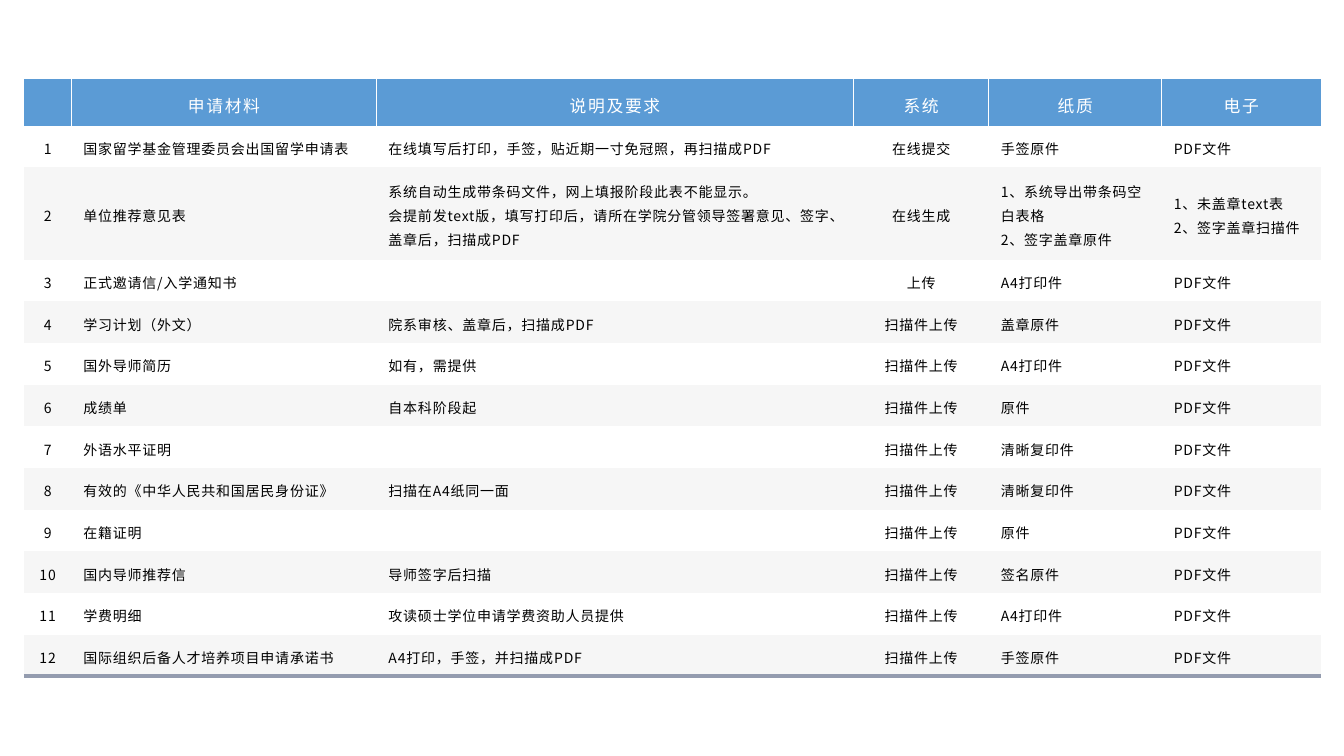
import dataclasses

import lxml.etree
import pptx
import pptx.dml.color
import pptx.enum.text
import pptx.oxml.ns
import pptx.util

Cm = pptx.util.Cm
Pt = pptx.util.Pt
qn = pptx.oxml.ns.qn


@dataclasses.dataclass(frozen=True)
class Theme:
    """Colours, type sizes and spacing of the slide."""
    font: str = "Noto Sans CJK SC"
    header_fill: str = "5B9BD5"
    header_text: str = "FFFFFF"
    body_text: str = "000000"
    odd_fill: str = "FFFFFF"
    even_fill: str = "F6F6F6"
    divider: str = "FFFFFF"
    closing_rule: str = "949CAF"
    header_size: float = 12
    body_size: float = 10
    header_tracking: int = 120
    body_tracking: int = 60
    line_spacing: float = 1.2
    no_grid_style: str = "{2D5ABB26-0587-4C30-8999-92F81FD0307C}"


THEME = Theme()

HEADINGS = ["", "申请材料", "说明及要求", "系统", "纸质", "电子"]
COLUMN_WIDTHS = [1.2, 7.69, 12.02, 3.41, 4.36, 4.0]
CENTRED_COLUMNS = {0, 3}
HEADER_HEIGHT = 1.18
ROW_HEIGHT = 1.05
TALL_ROW_HEIGHT = 2.32
UPLOAD = "扫描件上传"
PDF = "PDF文件"
MATERIALS = [
    ("国家留学基金管理委员会出国留学申请表",
     "在线填写后打印，手签，贴近期一寸免冠照，再扫描成PDF", "在线提交", "手签原件", PDF),
    ("单位推荐意见表",
     "系统自动生成带条码文件，网上填报阶段此表不能显示。\n"
     "会提前发text版，填写打印后，请所在学院分管领导签署意见、签字、盖章后，扫描成PDF",
     "在线生成", "1、系统导出带条码空白表格\n2、签字盖章原件",
     "1、未盖章text表\n2、签字盖章扫描件"),
    ("正式邀请信/入学通知书", "", "上传", "A4打印件", PDF),
    ("学习计划（外文）", "院系审核、盖章后，扫描成PDF", UPLOAD, "盖章原件", PDF),
    ("国外导师简历", "如有，需提供", UPLOAD, "A4打印件", PDF),
    ("成绩单", "自本科阶段起", UPLOAD, "原件", PDF),
    ("外语水平证明", "", UPLOAD, "清晰复印件", PDF),
    ("有效的《中华人民共和国居民身份证》", "扫描在A4纸同一面", UPLOAD, "清晰复印件", PDF),
    ("在籍证明", "", UPLOAD, "原件", PDF),
    ("国内导师推荐信", "导师签字后扫描", UPLOAD, "签名原件", PDF),
    ("学费明细", "攻读硕士学位申请学费资助人员提供", UPLOAD, "A4打印件", PDF),
    ("国际组织后备人才培养项目申请承诺书", "A4打印，手签，并扫描成PDF", UPLOAD, "手签原件", PDF),
]


def add_border(cell, side, colour, points):
    """Draw one solid border; side is L, R, T or B."""
    properties = cell._tc.get_or_add_tcPr()
    line = lxml.etree.SubElement(properties, qn(f"a:ln{side}"), w=str(Pt(points)))
    fill = lxml.etree.SubElement(line, qn("a:solidFill"))
    lxml.etree.SubElement(fill, qn("a:srgbClr"), val=colour)


def style_run(run, size, colour, tracking):
    """Set the font, size, colour and letter spacing of a run."""
    run.font.name = THEME.font
    run.font.size = Pt(size)
    run.font.color.rgb = pptx.dml.color.RGBColor.from_string(colour)
    properties = run._r.get_or_add_rPr()
    properties.set("spc", str(tracking))
    lxml.etree.SubElement(properties, qn("a:ea"), typeface=THEME.font)


def fill_cell(cell, text, fill, centred, size, colour, tracking):
    """Fill a cell with a colour and its text."""
    cell.fill.solid()
    cell.fill.fore_color.rgb = pptx.dml.color.RGBColor.from_string(fill)
    cell.margin_left = cell.margin_right = Cm(0.3)
    cell.margin_top = cell.margin_bottom = Cm(0.18)
    cell.vertical_anchor = pptx.enum.text.MSO_ANCHOR.MIDDLE
    cell.text_frame.text = text
    alignment = pptx.enum.text.PP_ALIGN
    for paragraph in cell.text_frame.paragraphs:
        paragraph.alignment = alignment.CENTER if centred else alignment.LEFT
        paragraph.line_spacing = THEME.line_spacing
        for run in paragraph.runs:
            style_run(run, size, colour, tracking)
        if not paragraph.runs:
            lxml.etree.SubElement(paragraph._p, qn("a:endParaRPr"), sz=str(int(size * 100)))


def add_materials_table(slide, left, top):
    """Place the table of application materials at the given corner."""
    heights = [HEADER_HEIGHT] + [
        TALL_ROW_HEIGHT if "\n" in material[1] else ROW_HEIGHT for material in MATERIALS]
    table = slide.shapes.add_table(
        len(heights), len(COLUMN_WIDTHS), Cm(left), Cm(top),
        Cm(sum(COLUMN_WIDTHS)), Cm(sum(heights))).table
    table._tbl.tblPr.find(qn("a:tableStyleId")).text = THEME.no_grid_style
    table.horz_banding = False
    table.first_row = False
    for column, width in zip(table.columns, COLUMN_WIDTHS):
        column.width = Cm(width)
    for row, height in zip(table.rows, heights):
        row.height = Cm(height)

    last_column = len(HEADINGS) - 1
    for column, heading in enumerate(HEADINGS):
        cell = table.cell(0, column)
        if column > 0:
            add_border(cell, "L", THEME.divider, 1)
        if column < last_column:
            add_border(cell, "R", THEME.divider, 1)
        fill_cell(cell, heading, THEME.header_fill, True,
                  THEME.header_size, THEME.header_text, THEME.header_tracking)

    for number, material in enumerate(MATERIALS, start=1):
        fill = THEME.odd_fill if number % 2 else THEME.even_fill
        for column, text in enumerate((str(number), *material)):
            cell = table.cell(number, column)
            if number == len(MATERIALS):
                add_border(cell, "B", THEME.closing_rule, 3)
            fill_cell(cell, text, fill, column in CENTRED_COLUMNS,
                      THEME.body_size, THEME.body_text, THEME.body_tracking)


def main():
    """Build and save the presentation."""
    presentation = pptx.Presentation()
    presentation.slide_width = Cm(33.87)
    presentation.slide_height = Cm(19.05)
    slide = presentation.slides.add_slide(presentation.slide_layouts[6])
    add_materials_table(slide, left=0.6, top=1.99)
    presentation.save("out.pptx")


if __name__ == "__main__":
    main()
